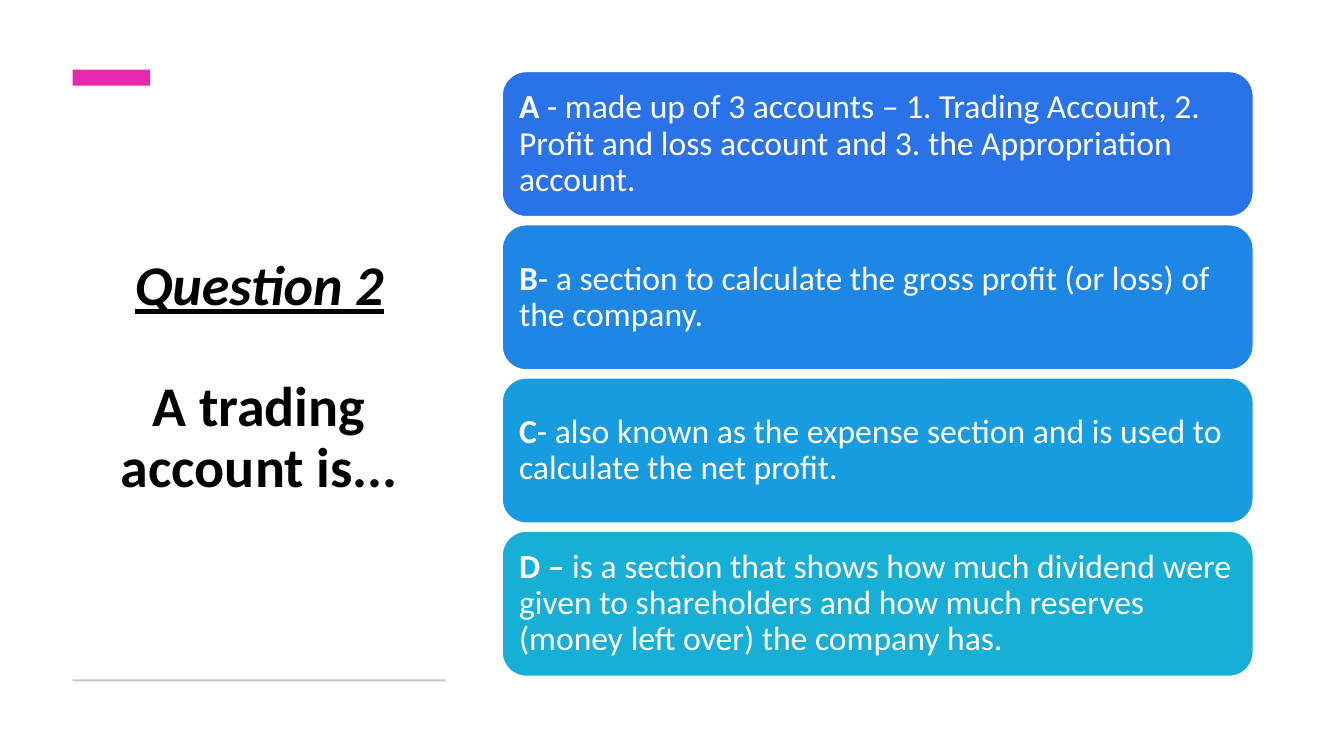
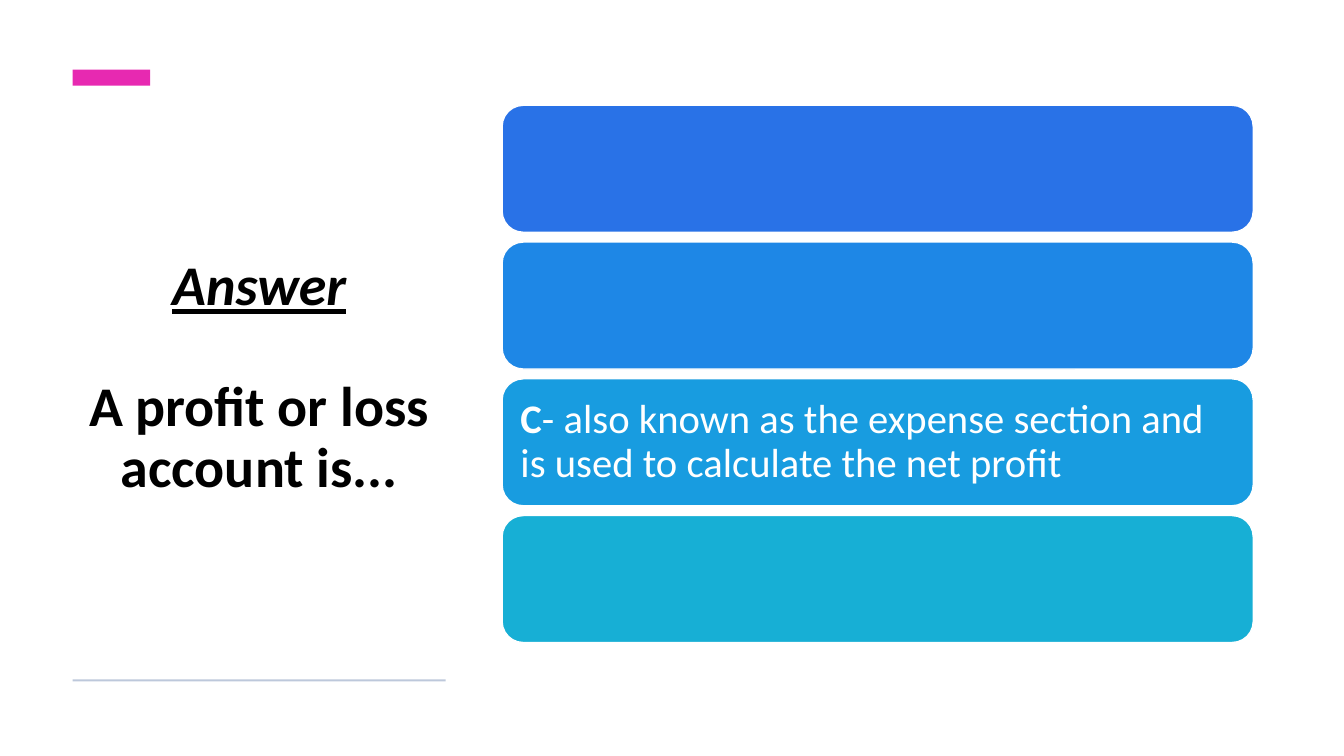
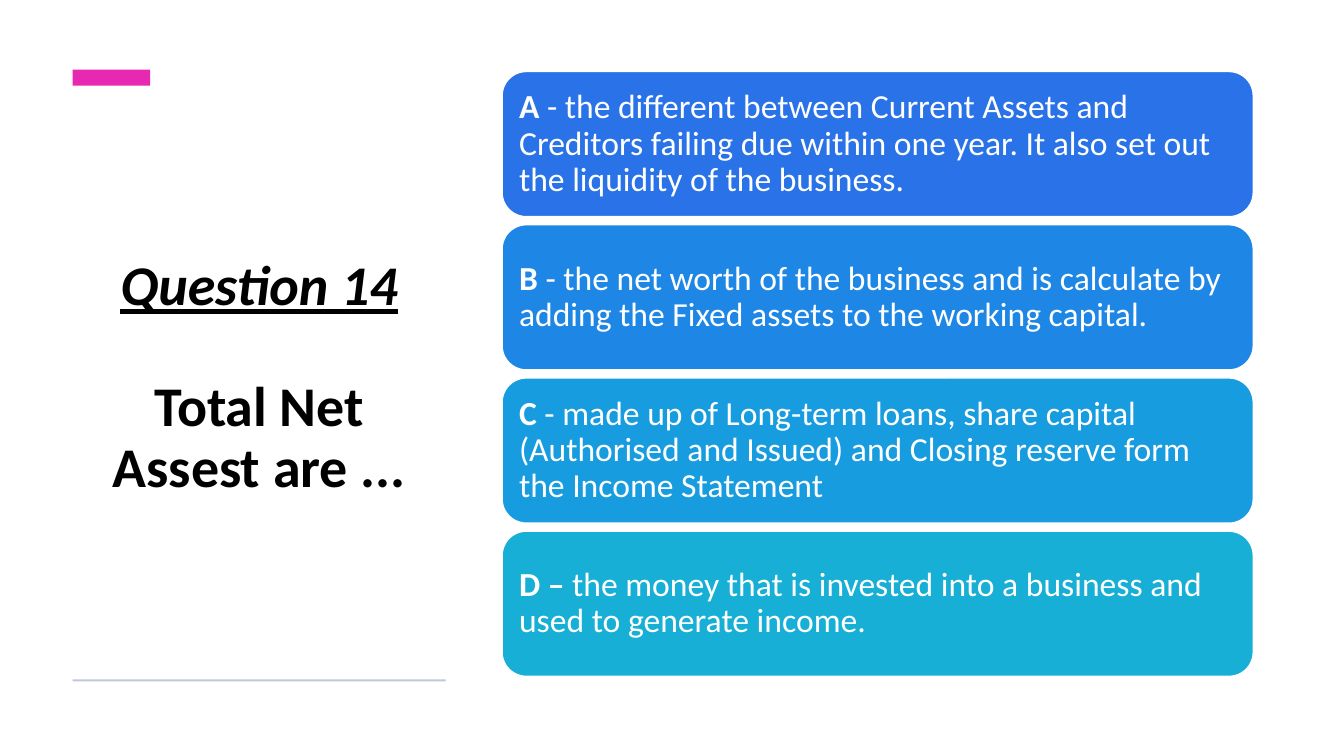
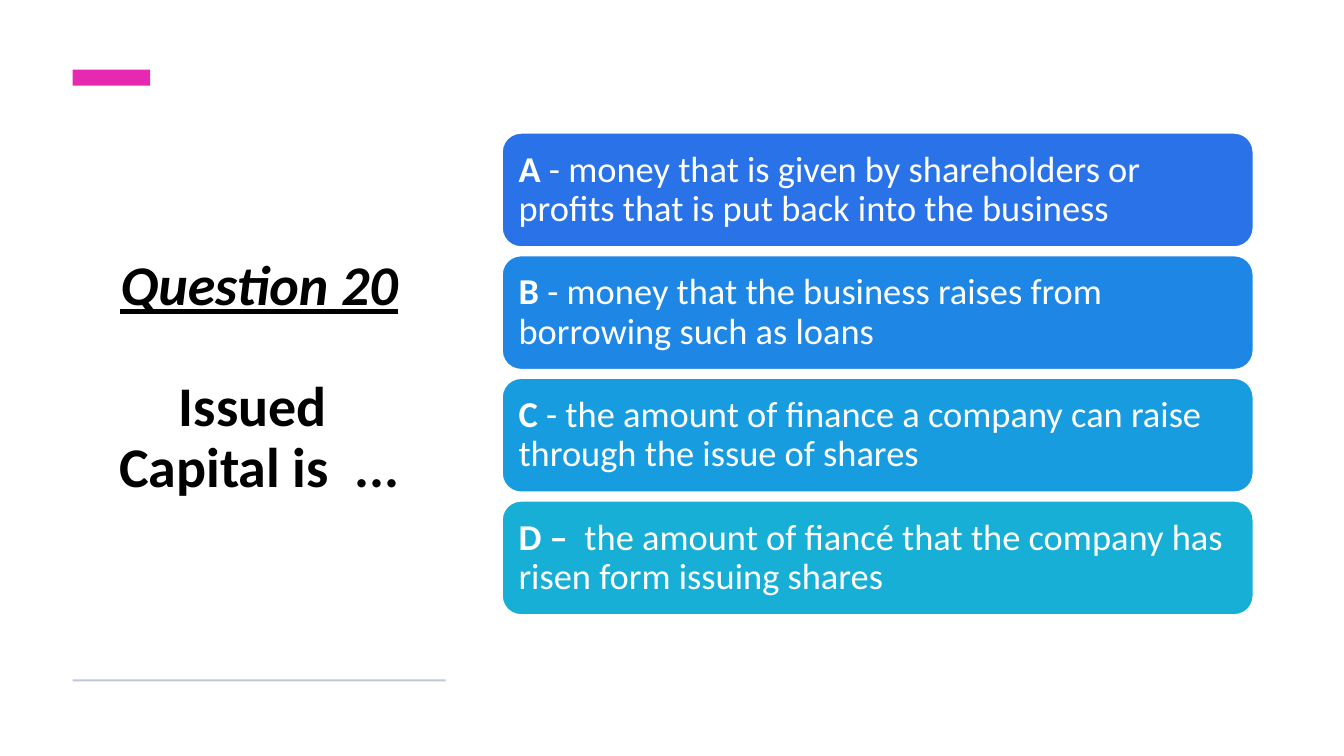
from pptx import Presentation
from pptx.dml.color import RGBColor
from pptx.enum.shapes import MSO_SHAPE as Shape
from pptx.enum.text import MSO_ANCHOR as Anchor, MSO_AUTO_SIZE as AutoSize, PP_ALIGN as Align
from pptx.util import Inches, Pt

COLORS = {
    "text": "000000",
    "white": "FFFFFF",
    "accent": "E729B1",
    "rule": "BDC8DB",
    "A": "2972E7",
    "B": "1E87E6",
    "C": "189CE0",
    "D": "17AFD5",
}

QUIZ = [
    ("Question 2", "A trading account is...", 24, 1.44, {
        "A": ("A", " - made up of 3 accounts – 1. Trading Account, 2. Profit and loss account "
                   "and 3. the Appropriation account."),
        "B": ("B", "- a section to calculate the gross profit (or loss) of the company."),
        "C": ("C", "- also known as the expense section and is used to calculate the net profit."),
        "D": ("D – ", "is a section that shows how much dividend were given to shareholders "
                      "and how much reserves (money left over) the company has."),
    }),
    ("Answer", "A profit or loss account is...", 29, 1.26, {
        "C": ("C", "- also known as the expense section and is used to calculate the net profit"),
    }),
    ("Question 14", "Total Net Assest are ...", 24, 1.44, {
        "A": ("A", " - the different between Current Assets and Creditors failing due within "
                   "one year. It also set out the liquidity of the business."),
        "B": ("B ", "- the net worth of the business and is calculate by adding the Fixed assets "
                    "to the working capital."),
        "C": ("C ", "- made up of Long-term loans, share capital (Authorised and Issued) "
                    "and Closing reserve form the Income Statement"),
        "D": ("D – ", "the money that is invested into a business and used to generate income."),
    }),
    ("Question 20", "Issued \vCapital is  ...", 26, 1.13, {
        "A": ("A", " - money that is given by shareholders or profits that is put back "
                   "into the business"),
        "B": ("B ", "- money that the business raises from borrowing such as loans"),
        "C": ("C ", "- the amount of finance a company can raise through the issue of shares"),
        "D": ("D –  ", "the amount of fiancé that the company has risen form issuing shares"),
    }),
]


class QuizDeck:
    """Holds the quiz style and the slide being built."""

    font = "Calibri"
    left, column_width = 0.72, 3.7
    card_left, card_width, card_middle = 4.98, 7.45, 3.71

    def __init__(self):
        self.deck = Presentation()
        self.deck.slide_width, self.deck.slide_height = Inches(13.33), Inches(7.5)
        self.page = None

    def add_page(self, heading, prompt):
        self.page = self.deck.slides.add_slide(self.deck.slide_layouts[5])
        self.title(heading, prompt)
        self.shape(Shape.RECTANGLE, self.left, 0.69, 0.77, 0.16, "accent")
        self.shape(Shape.RECTANGLE, self.left, 6.74, self.column_width, 0.02, "rule")

    def style(self, para, size, color):
        para.line_spacing = 0.9
        para.font.name = self.font
        para.font.size = Pt(size)
        para.font.color.rgb = RGBColor.from_string(COLORS[color])

    def title(self, heading, prompt):
        box = self.page.shapes.title
        box.left, box.top = Inches(self.left), Inches(1.05)
        box.width, box.height = Inches(self.column_width), Inches(5.41)
        frame = box.text_frame
        frame.word_wrap = True
        frame.auto_size = AutoSize.NONE
        frame.vertical_anchor = Anchor.MIDDLE
        first, second = frame.paragraphs[0], frame.add_paragraph()
        first.text, second.text = heading, prompt
        for para in (first, second):
            self.style(para, 40, "text")
            para.alignment = Align.CENTER
            para.font.bold = True
        first.font.italic = first.font.underline = True
        second.space_before = Inches(0.6)

    def shape(self, kind, left, top, width, height, color):
        box = self.page.shapes.add_shape(
            kind, Inches(left), Inches(top), Inches(width), Inches(height))
        box.shadow.inherit = False
        box.fill.solid()
        box.fill.fore_color.rgb = RGBColor.from_string(COLORS[color])
        box.line.fill.background()
        return box

    def card(self, top, height, color, size, answer):
        box = self.shape(
            Shape.ROUNDED_RECTANGLE, self.card_left, top, self.card_width, height, color)
        box.line.color.rgb = RGBColor.from_string(COLORS["white"])
        box.line.width = Pt(1)
        if not answer:
            return
        frame = box.text_frame
        frame.word_wrap = True
        frame.vertical_anchor = Anchor.MIDDLE
        inset = Inches(size / 240)
        frame.margin_left = frame.margin_right = inset
        frame.margin_top = frame.margin_bottom = inset
        para = frame.paragraphs[0]
        para.alignment = Align.LEFT
        self.style(para, size, "white")
        for text, bold in zip(answer, (True, False)):
            span = para.add_run()
            span.text = text
            span.font.bold = bold

    def cards(self, size, height, answers):
        pitch = height + size / 300
        first_top = self.card_middle - (3 * pitch + height) / 2
        for row, letter in enumerate("ABCD"):
            self.card(first_top + row * pitch, height, letter, size, answers.get(letter))


def main():
    quiz = QuizDeck()
    for heading, prompt, size, height, answers in QUIZ:
        quiz.add_page(heading, prompt)
        quiz.cards(size, height, answers)
    quiz.deck.save("out.pptx")


if __name__ == "__main__":
    main()
